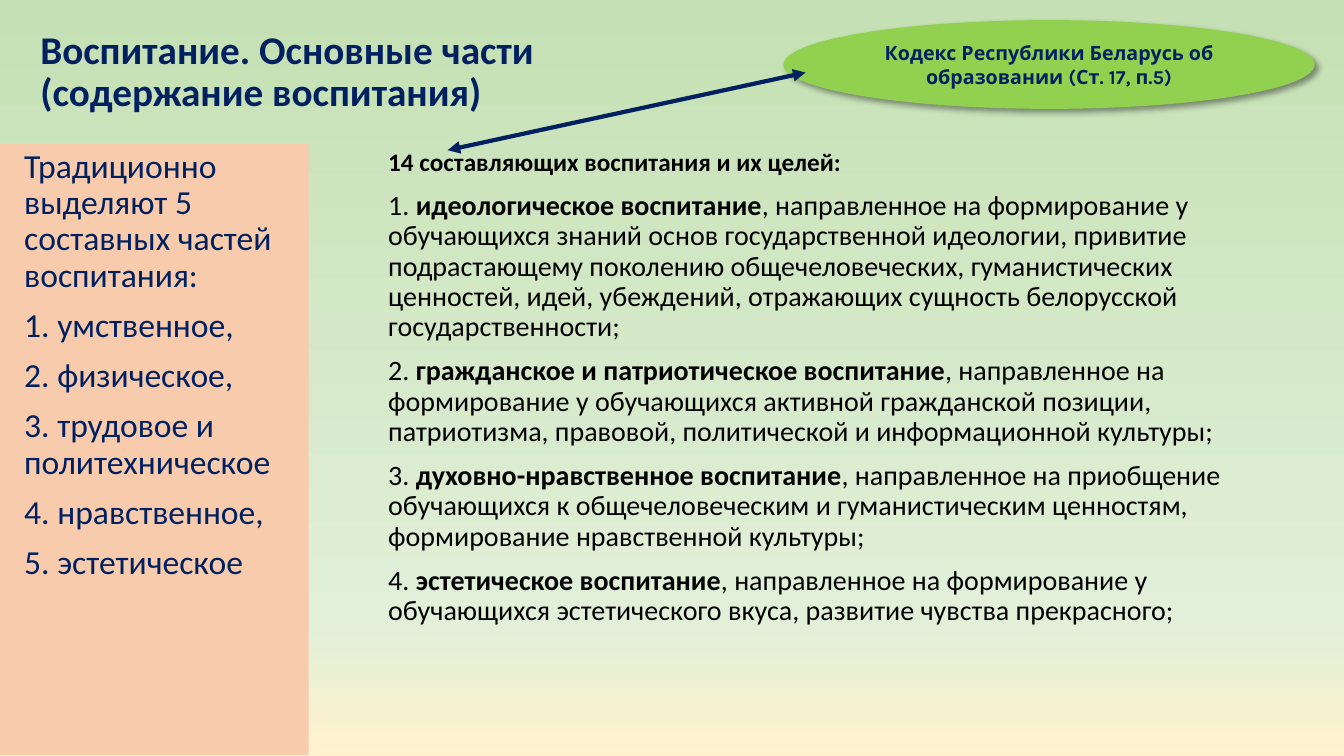
from dataclasses import dataclass

from lxml.etree import SubElement
from pptx import Presentation
from pptx.dml.color import RGBColor
from pptx.enum.shapes import MSO_CONNECTOR as Connector, MSO_SHAPE as Shape
from pptx.enum.text import MSO_ANCHOR as Anchor, MSO_AUTO_SIZE as AutoSize, PP_ALIGN as Align
from pptx.oxml.ns import qn
from pptx.util import Inches, Pt

# Content: a paragraph is a list of (text, size, bold) runs
TITLE_LINES = ["Воспитание. Основные части ", "(содержание воспитания)"]
TRADITIONAL_PARTS = [
    "Традиционно выделяют 5 составных частей воспитания:",
    "1. умственное,",
    "2. физическое,",
    "3. трудовое и политехническое",
    "4. нравственное,",
    "5. эстетическое",
]
COMPONENTS_HEADING = "14 составляющих воспитания и их целей:"
COMPONENTS = [
    ("идеологическое воспитание",
     ", направленное на формирование у обучающихся знаний основ государственной идеологии, "
     "привитие подрастающему поколению общечеловеческих, гуманистических ценностей, идей, "
     "убеждений, отражающих сущность белорусской государственности;"),
    ("гражданское и патриотическое воспитание",
     ", направленное на формирование у обучающихся активной гражданской позиции, "
     "патриотизма, правовой, политической и информационной культуры;"),
    ("духовно-нравственное воспитание",
     ", направленное на приобщение обучающихся к общечеловеческим и гуманистическим "
     "ценностям, формирование нравственной культуры;"),
    ("эстетическое воспитание",
     ", направленное на формирование у обучающихся эстетического вкуса, "
     "развитие чувства прекрасного;"),
]
CODE_REFERENCE = "Кодекс Республики Беларусь об образовании (Ст. 17, п.5)"

# Places: left, top, width, height
TITLE_AREA = (0.3, 0.21, 6.01, 1.03)
PARTS_AREA = (-0.11, 1.43, 3.17, 6.06)
COMPONENTS_AREA = (3.75, 1.44, 9.24, 5.74)
CODE_AREA = (7.77, 0.2, 5.27, 0.88)
ARROW_ENDS = (4.44, 1.49, 7.99, 0.72)


@dataclass(frozen=True)
class Theme:
    navy: str = "002060"
    black: str = "000000"
    peach: str = "F8CBAD"
    lime: str = "92D050"
    backdrop: tuple = ((0, "C5E0B4"), (83, "E2F0D9"), (100, "FFF2CC"))
    font: str = "Calibri"
    code_font: str = "Karla"
    title_size: int = 28
    parts_size: int = 24
    component_size: int = 20
    heading_size: int = 18
    code_size: int = 14


theme = Theme()


def color(value):
    return RGBColor.from_string(value)


def place(box, area):
    box.left, box.top, box.width, box.height = map(Inches, area)


def add_span(para, text, size, ink, bold=False, font=theme.font):
    span = para.add_run()
    span.text = text
    span.font.name, span.font.size, span.font.bold = font, Pt(size), bold
    span.font.color.rgb = color(ink)


def fill_list(box, area, paragraphs, ink, indent=0):
    place(box, area)
    frame = box.text_frame
    frame.auto_size = AutoSize.NONE
    for number, spans in enumerate(paragraphs):
        para = frame.add_paragraph() if number else frame.paragraphs[0]
        para.line_spacing, para.space_before = 0.9, Pt(10)
        properties = para._p.get_or_add_pPr()
        properties.set("marL", str(Inches(indent)))
        properties.set("indent", "0")
        SubElement(properties, qn("a:buNone"))
        for text, size, bold in spans:
            add_span(para, text, size, ink, bold)


deck = Presentation()
deck.slide_width, deck.slide_height = Inches(13.33), Inches(7.5)
page = deck.slides.add_slide(deck.slide_layouts[3])
title, parts, components = page.placeholders

# Background gradient, top to bottom
backdrop = page.background.fill
backdrop.gradient()
backdrop.gradient_angle = 270
stops = next(page.element.iter(qn("a:gsLst")))
for stop in list(stops):
    stops.remove(stop)
for percent, value in theme.backdrop:
    stop = SubElement(stops, qn("a:gs"), pos=str(percent * 1000))
    SubElement(stop, qn("a:srgbClr"), val=value)

# Title
place(title, TITLE_AREA)
title.text_frame.auto_size = AutoSize.NONE
title.text_frame.vertical_anchor = Anchor.MIDDLE
para = title.text_frame.paragraphs[0]
para.alignment, para.line_spacing = Align.LEFT, 0.9
for number, line in enumerate(TITLE_LINES):
    if number:
        para.add_line_break()
    add_span(para, line, theme.title_size, theme.navy, bold=True)

# Left panel: five traditional parts
parts.fill.solid()
parts.fill.fore_color.rgb = color(theme.peach)
fill_list(parts, PARTS_AREA, [[(line, theme.parts_size, False)] for line in TRADITIONAL_PARTS],
          theme.navy, indent=0.25)

# Right list: components and their aims
size = theme.component_size
component_paragraphs = [[(COMPONENTS_HEADING, theme.heading_size, True)]] + [
    [(f"{number}. ", size, False), (name, size, True), (aim, size, False)]
    for number, (name, aim) in enumerate(COMPONENTS, 1)
]
fill_list(components, COMPONENTS_AREA, component_paragraphs, theme.black)

# Ellipse with the reference to the code
code = page.shapes.add_shape(Shape.OVAL, *map(Inches, CODE_AREA))
code.fill.solid()
code.fill.fore_color.rgb = color(theme.lime)
code.line.fill.background()
code.shadow.inherit = False
effects = code._element.spPr.find(qn("a:effectLst"))
shadow = SubElement(effects, qn("a:outerShdw"), blurRad=str(Pt(4)), dist=str(Pt(3)),
                    dir="2700000", algn="tl", rotWithShape="0")
shade = SubElement(shadow, qn("a:srgbClr"), val=theme.black)
SubElement(shade, qn("a:alpha"), val="40000")
code.text_frame.word_wrap = True
code.text_frame.vertical_anchor = Anchor.MIDDLE
para = code.text_frame.paragraphs[0]
para.alignment = Align.CENTER
add_span(para, CODE_REFERENCE, theme.code_size, theme.navy, bold=True, font=theme.code_font)

# Two-headed arrow between the list and the ellipse
arrow = page.shapes.add_connector(Connector.STRAIGHT, *map(Inches, ARROW_ENDS))
arrow.line.color.rgb = color(theme.navy)
arrow.line.width = Pt(3)
for end in ("a:headEnd", "a:tailEnd"):
    SubElement(arrow.line._get_or_add_ln(), qn(end), type="triangle")
SubElement(arrow._element.spPr, qn("a:effectLst"))

deck.save("out.pptx")
